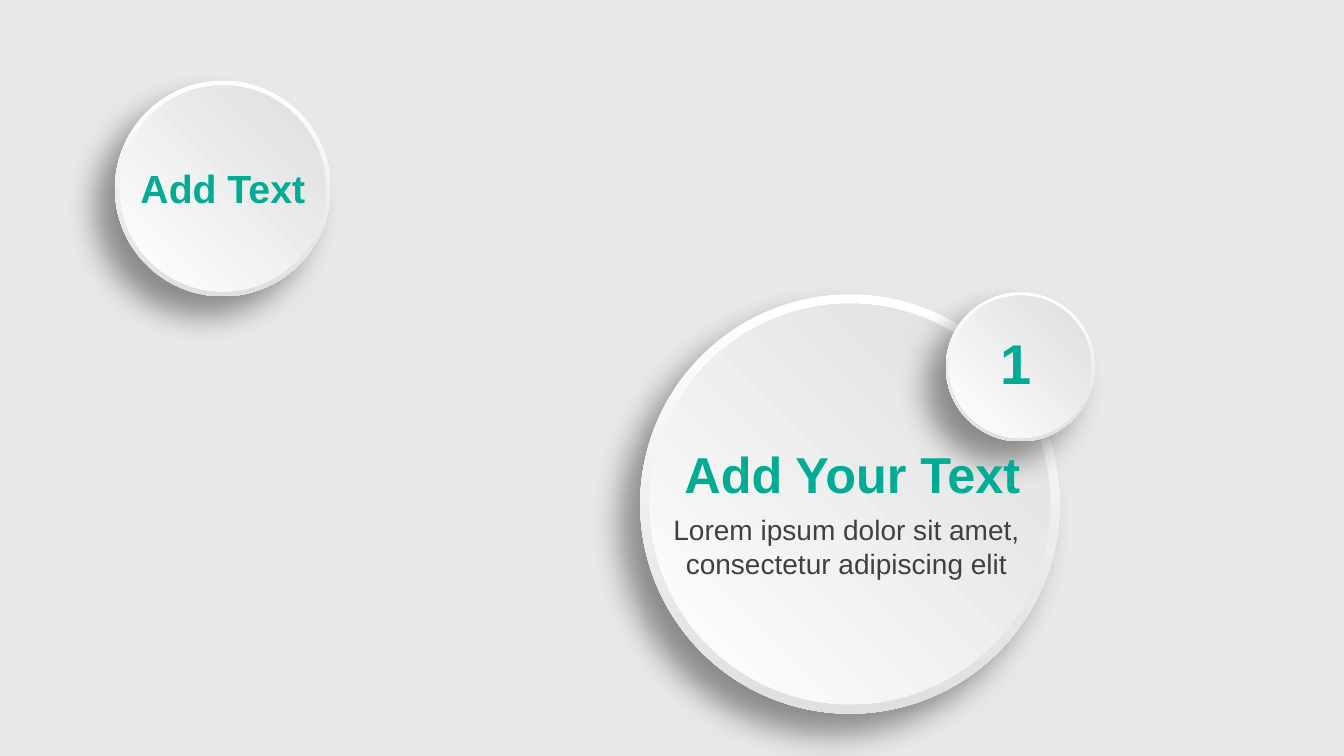
import lxml.etree
import pptx
import pptx.dml.color
import pptx.enum.shapes
import pptx.enum.text
import pptx.oxml.ns
import pptx.util

Inches = pptx.util.Inches
Pt = pptx.util.Pt
ALIGN = pptx.enum.text.PP_ALIGN

TEAL = "01AB94"
GREY = "404040"
FACE_RATIO = 0.955  # face diameter relative to the rim


def rgb(hex_value):
    return pptx.dml.color.RGBColor.from_string(hex_value)


def add_circle(group, center_x, center_y, diameter, end_color, angle):
    """Borderless circle that fades from white to end_color."""
    circle = group.shapes.add_shape(
        pptx.enum.shapes.MSO_SHAPE.OVAL,
        Inches(center_x - diameter / 2), Inches(center_y - diameter / 2),
        Inches(diameter), Inches(diameter))
    circle.shadow.inherit = False
    circle.line.fill.background()
    circle.fill.gradient()
    circle.fill.gradient_angle = angle
    for stop, position, color in zip(circle.fill.gradient_stops, (0, 1), ("FFFFFF", end_color)):
        stop.position = position
        stop.color.rgb = rgb(color)
    return circle


def add_shadow(shape):
    """Soft shadow falling to the lower left."""
    qn = pptx.oxml.ns.qn
    effects = shape.element.spPr.find(qn("a:effectLst"))
    shadow = lxml.etree.SubElement(
        effects, qn("a:outerShdw"), blurRad=str(Pt(22)), dist=str(Pt(20)),
        dir=str(135 * 60000), algn="tr", rotWithShape="0")
    color = lxml.etree.SubElement(shadow, qn("a:srgbClr"), val="000000")
    lxml.etree.SubElement(color, qn("a:alpha"), val="40000")


def add_button(group, center_x, center_y, diameter):
    """Raised button: shadowed rim with a face on top."""
    add_shadow(add_circle(group, center_x, center_y, diameter, "E0E0E0", 270))
    add_circle(group, center_x, center_y, diameter * FACE_RATIO, "DDDEDD", 45)


def add_label(group, text, left, top, width, height, size, color=TEAL,
              bold=True, wrap=False, align=ALIGN.CENTER):
    label = group.shapes.add_textbox(Inches(left), Inches(top), Inches(width), Inches(height))
    frame = label.text_frame
    frame.word_wrap = wrap
    frame.auto_size = pptx.enum.text.MSO_AUTO_SIZE.SHAPE_TO_FIT_TEXT
    paragraph = frame.paragraphs[0]
    paragraph.alignment = align
    run = paragraph.add_run()
    run.text = text
    font_format = {"name": "Arial", "size": Pt(size), "bold": bold}
    for attribute, value in font_format.items():
        setattr(run.font, attribute, value)
    run.font.color.rgb = rgb(color)


def main():
    deck = pptx.Presentation()
    deck.slide_width = Inches(13.33)
    deck.slide_height = Inches(7.5)
    slide = deck.slides.add_slide(deck.slide_layouts[6])

    # Background
    backdrop = slide.background.fill
    backdrop.solid()
    backdrop.fore_color.rgb = rgb("E8E8E8")

    # Main topic with its number badge
    topic = slide.shapes.add_group_shape()
    add_button(topic, 8.43, 5, 4.16)
    add_button(topic, 10.12, 3.64, 1.48)
    add_label(topic, "1", 9.82, 3.21, 0.51, 0.77, 40, align=ALIGN.LEFT)
    add_label(topic, "Lorem ipsum dolor sit amet, consectetur adipiscing elit",
              6.55, 5.04, 3.69, 0.77, 20, color=GREY, bold=False, wrap=True)
    add_label(topic, "Add Your Text", 6.67, 4.35, 3.57, 0.71, 36)

    # Side topic
    side_topic = slide.shapes.add_group_shape()
    add_button(side_topic, 2.21, 1.87, 2.14)
    add_label(side_topic, "Add Text", 1.28, 1.58, 1.86, 0.57, 28)

    deck.save("out.pptx")


if __name__ == "__main__":
    main()
